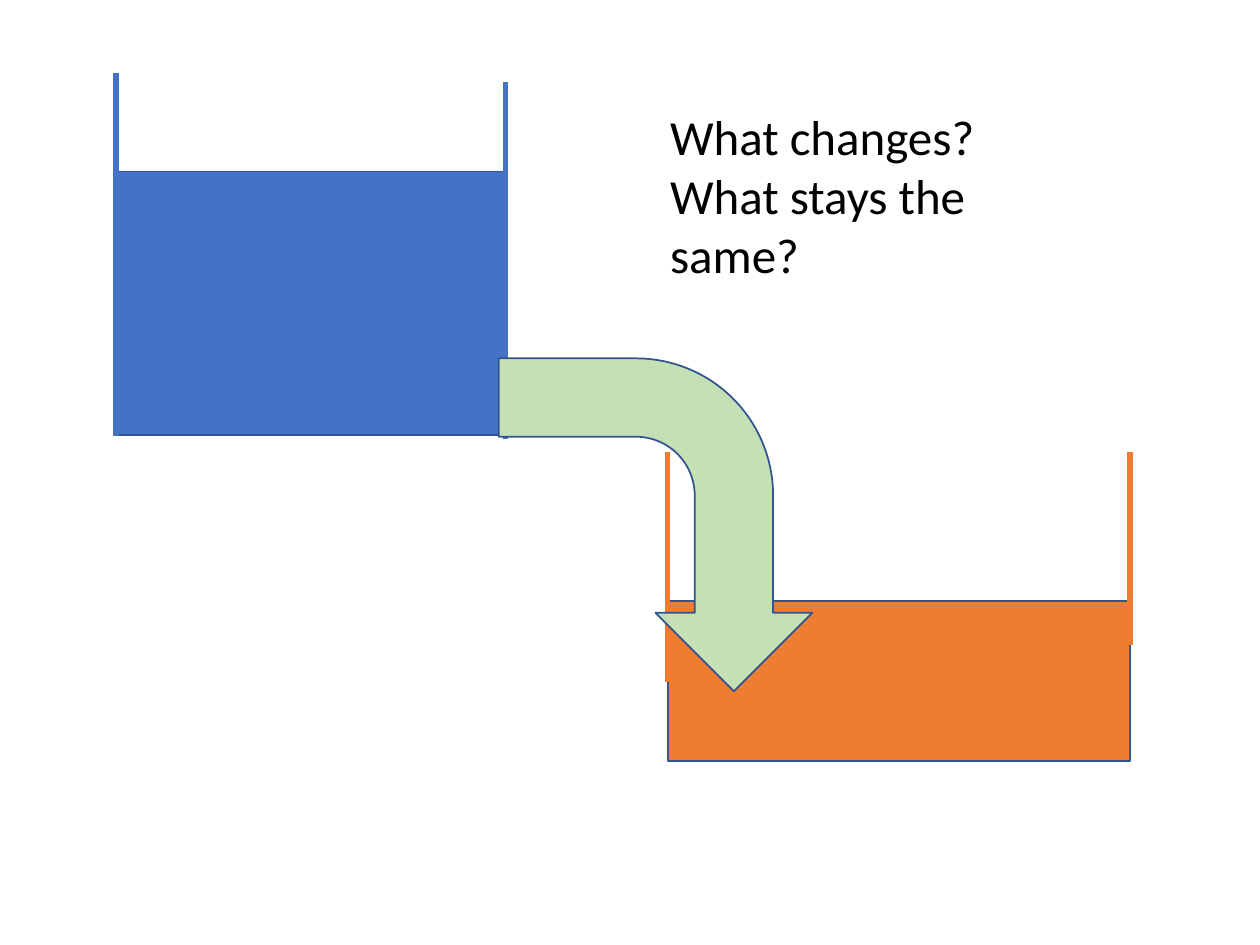
from lxml import etree
from pptx import Presentation
from pptx.dml.color import RGBColor
from pptx.enum import shapes, text
from pptx.oxml.ns import qn
from pptx.util import Cm, Pt

BLUE = RGBColor(0x44, 0x72, 0xC4)
ORANGE = RGBColor(0xED, 0x7D, 0x31)
GREEN = RGBColor(0xC5, 0xE0, 0xB4)
OUTLINE = RGBColor(0x32, 0x54, 0x91)
BLACK = RGBColor(0, 0, 0)


def add_filled_shape(slide, kind, box, color):
    shape = slide.shapes.add_shape(kind, *(Cm(length) for length in box))
    shape.shadow.inherit = False
    shape.fill.solid()
    shape.fill.fore_color.rgb = color
    shape.line.color.rgb = OUTLINE
    shape.line.width = Pt(1)
    return shape


def add_wall(slide, x, bottom, top, color):
    wall = slide.shapes.add_connector(
        shapes.MSO_CONNECTOR.STRAIGHT, Cm(x), Cm(bottom), Cm(x), Cm(top))
    wall.line.color.rgb = color
    wall.line.width = Pt(3)
    etree.SubElement(wall._element.spPr, qn("a:effectLst"))


def add_tank(slide, box, color, walls):
    """Water fills the box; each wall is (rise above, drop below) its surface."""
    left, surface, width, _ = box
    add_filled_shape(slide, shapes.MSO_SHAPE.RECTANGLE, box, color)
    for x, (rise, drop) in zip((left, left + width), walls):
        add_wall(slide, x, surface + drop, surface - rise, color)


def add_question(slide, box, wording):
    text_box = slide.shapes.add_textbox(*(Cm(length) for length in box))
    text_frame = text_box.text_frame
    text_frame.word_wrap = True
    text_frame.auto_size = text.MSO_AUTO_SIZE.SHAPE_TO_FIT_TEXT
    text_frame.text = wording
    font = text_frame.paragraphs[0].runs[0].font
    font.name = "Calibri"
    font.size = Pt(28)
    font.color.rgb = BLACK


def add_flow_arrow(slide, box):
    arrow = add_filled_shape(slide, shapes.MSO_SHAPE.BENT_ARROW, box, GREEN)
    arrow.rotation = 90


def main():
    presentation = Presentation()
    presentation.slide_width = Cm(25.4)
    presentation.slide_height = Cm(19.05)
    slide = presentation.slides.add_slide(presentation.slide_layouts[6])

    # Upper and lower tanks
    add_tank(slide, (2.34, 3.46, 7.85, 5.31), BLUE, [(1.98, 5.33), (1.8, 5.38)])
    add_tank(slide, (13.46, 12.12, 9.32, 3.23), ORANGE, [(3, 1.63), (3, 0.89)])

    # Question, and the flow between the tanks
    add_question(slide, (13.26, 2.03, 8.26, 3.84),
                 "What changes? What stays the same?")
    add_flow_arrow(slide, (9.86, 7.42, 6.71, 6.32))

    presentation.save("out.pptx")


if __name__ == "__main__":
    main()
